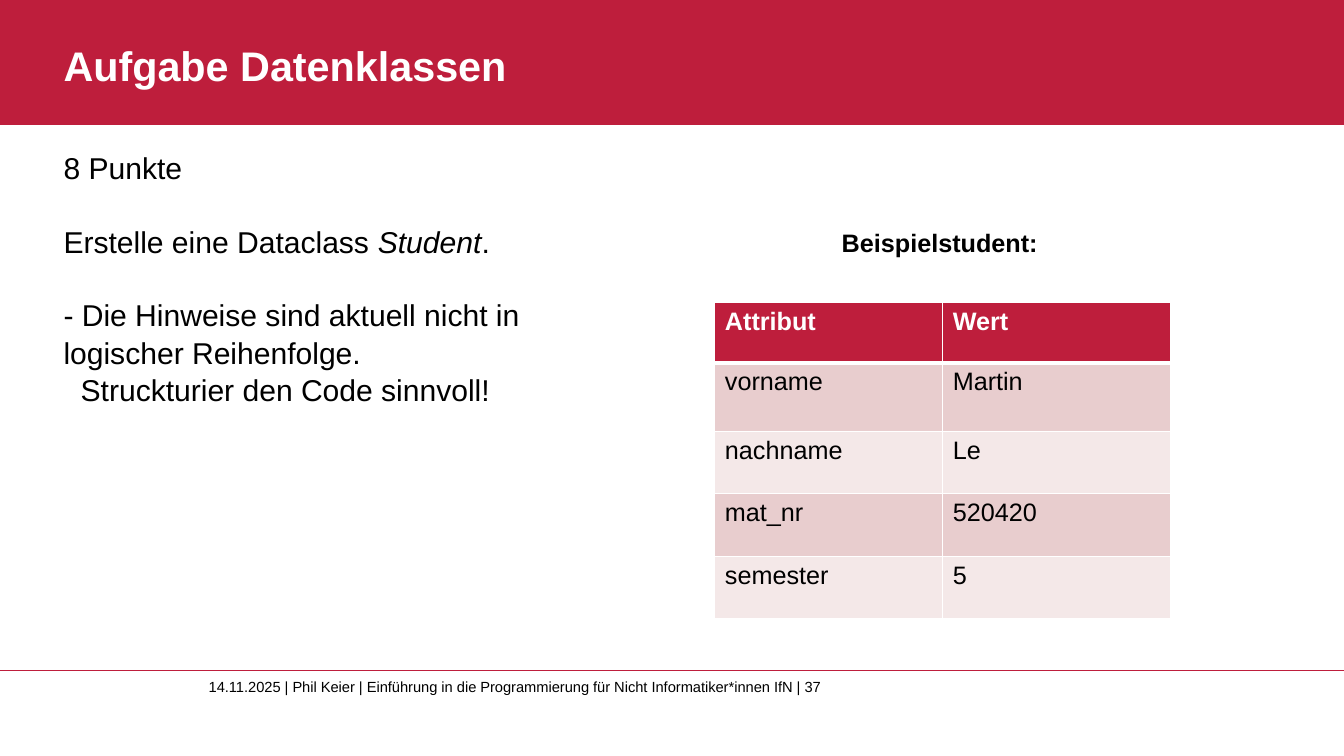
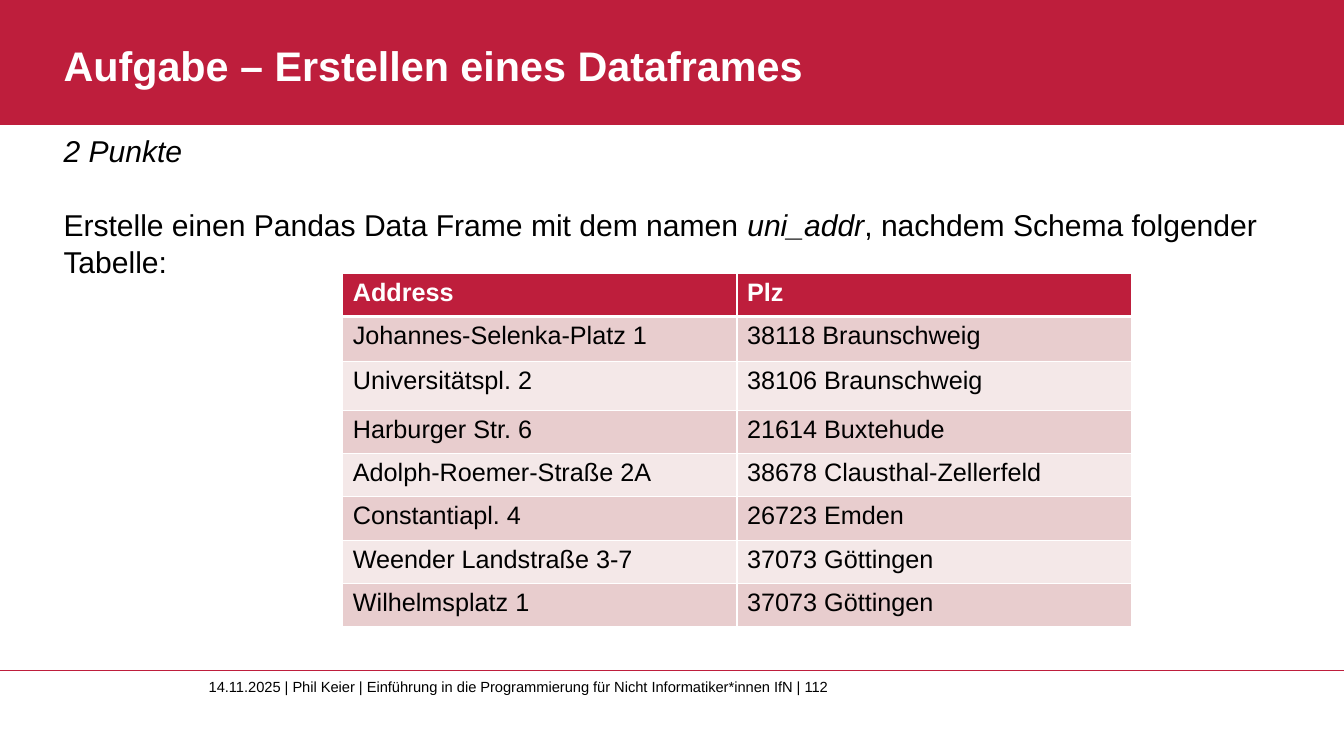
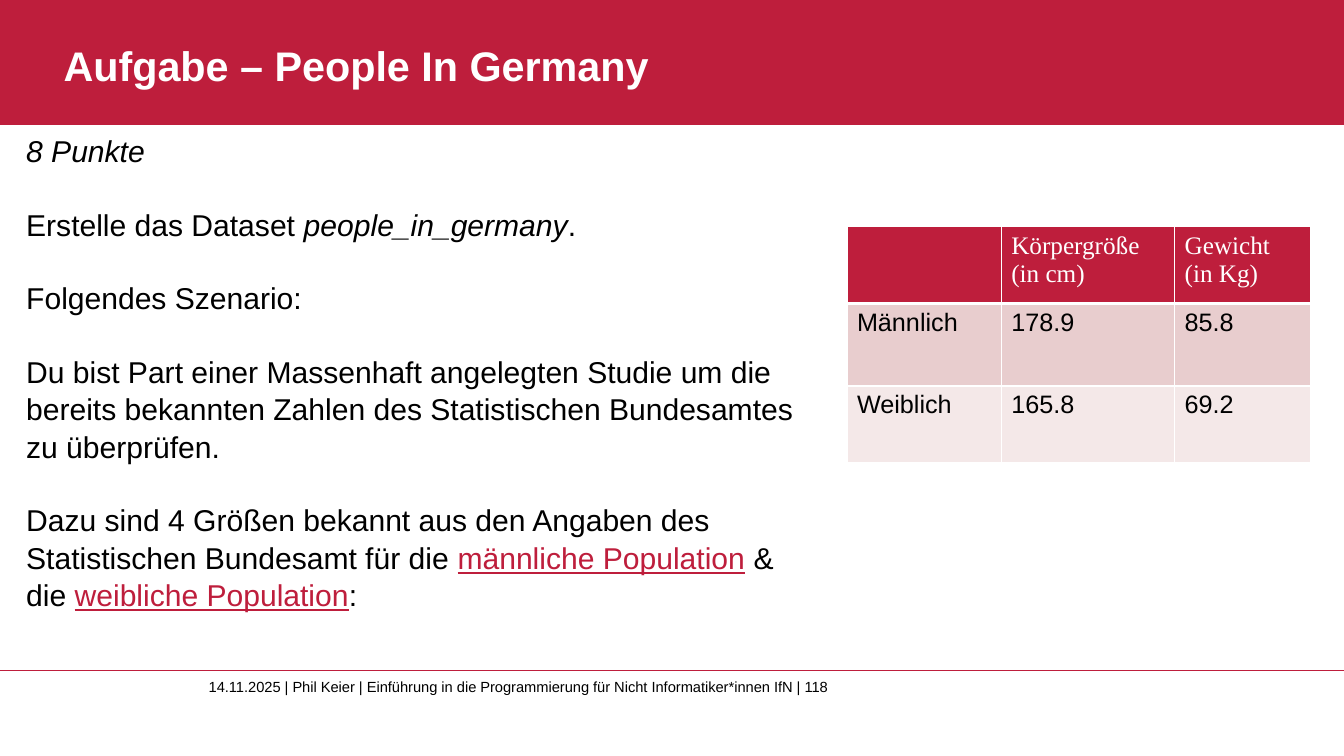
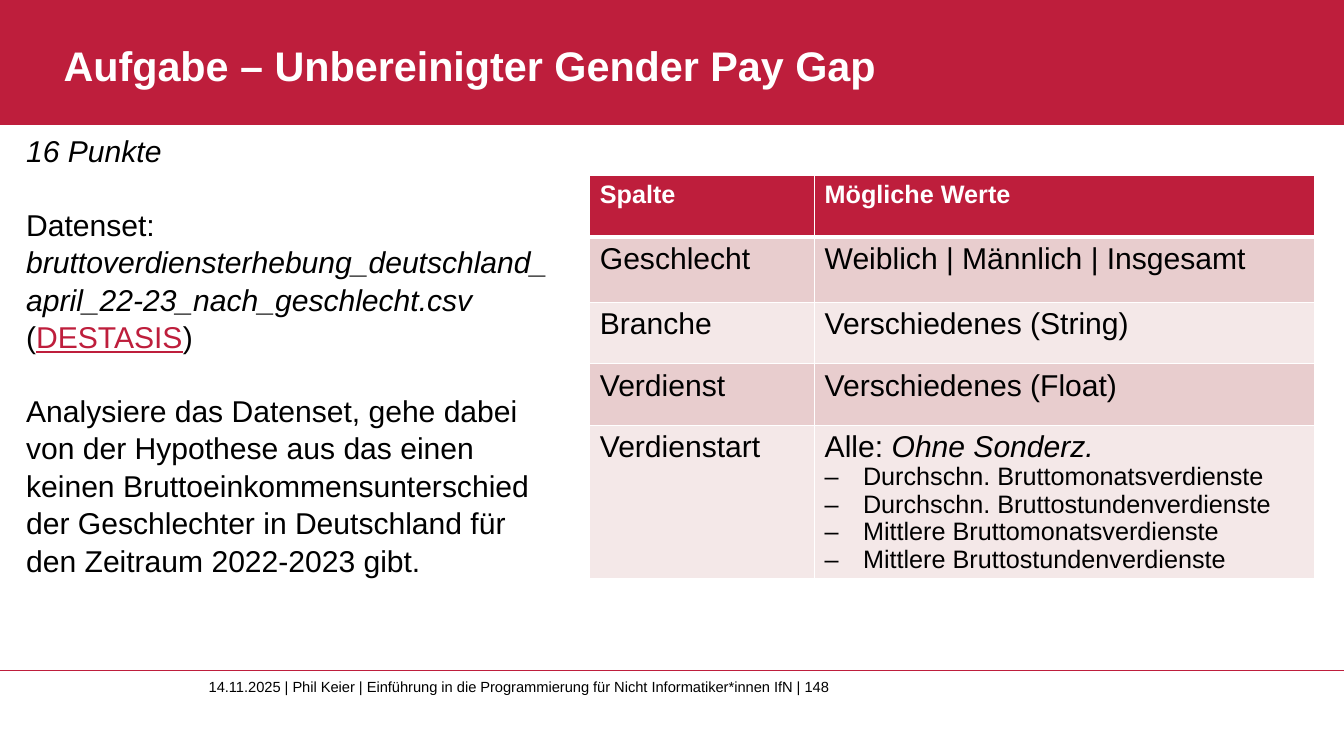
"""Builds four exercise slides on data classes and data frames."""
from lxml.etree import SubElement
from pptx import Presentation
from pptx.dml.color import RGBColor
from pptx.enum.shapes import MSO_CONNECTOR as CONN, MSO_SHAPE as SHAPE
from pptx.enum.text import MSO_ANCHOR as ANCHOR, MSO_AUTO_SIZE as AUTO
from pptx.oxml.ns import qn
from pptx.util import Inches, Pt

COLORS = {"red": "BE1E3C", "white": "FFFFFF", "black": "000000",
          "dark_band": "E8CDCE", "light_band": "F4E8E8"}
FONT = "Arial"
BODY_SIZE, TABLE_SIZE = 21.5, 18
BODY_SPACING = 1.04
GAP = Pt(25.7)
FOOTER = ("14.11.2025 | Phil Keier | Einführung in die Programmierung "
          "für Nicht Informatiker*innen IfN | {}")


def rgb(name):
    """Return the named colour."""
    return RGBColor.from_string(COLORS[name])


def place(shape, box):
    """Move a shape to a box of left, top, width and height in inches."""
    shape.left, shape.top, shape.width, shape.height = map(Inches, box)


def set_margins(tf):
    """Remove the insets and let the text wrap at its full size."""
    tf.margin_left = tf.margin_top = tf.margin_right = tf.margin_bottom = 0
    tf.word_wrap = True
    tf.auto_size = AUTO.NONE


def add_run(p, text, size, color="black", bold=False, kind="", font=FONT):
    """Add one run; kind is empty, "italic" or "link"."""
    r = p.add_run()
    r.text = text
    r.font.name, r.font.size, r.font.bold = font, Pt(size), bold
    r.font.italic = kind == "italic"
    r.font.underline = kind == "link"
    r.font.color.rgb = rgb("red" if kind == "link" else color)


def add_runs(p, parts, size):
    """Add plain text or a list of strings and (text, kind) pairs."""
    for part in [parts] if isinstance(parts, str) else parts:
        text, kind = (part, "") if isinstance(part, str) else part
        add_run(p, text, size, kind=kind)


def set_bullet(p, char="", indent=0.0, hang=0.0):
    """Set the bullet sign, or none, with the indents in inches."""
    pPr = p._p.get_or_add_pPr()
    pPr.set("marL", str(Inches(indent)))
    pPr.set("indent", str(-Inches(hang)))
    if char:
        SubElement(pPr, qn("a:buFont")).set("typeface", FONT)
        SubElement(pPr, qn("a:buChar")).set("char", char)
    else:
        SubElement(pPr, qn("a:buNone"))


def setup_layout(prs, s):
    """Put the band, the footer rule and the title frame on the layout."""
    layout = s.slide_layout
    band = s.shapes.add_shape(SHAPE.RECTANGLE, 0, 0, prs.slide_width, Inches(1.24))
    band.shadow.inherit = False
    band.fill.solid()
    band.fill.fore_color.rgb = rgb("red")
    band.line.fill.background()
    rule = s.shapes.add_connector(CONN.STRAIGHT, 0, Inches(6.65),
                                  prs.slide_width, Inches(6.65))
    rule.line.color.rgb = rgb("red")
    rule.line.width = Pt(0.75)
    SubElement(rule.element.spPr, qn("a:effectLst"))
    for shape in (band, rule):
        layout.shapes.element.insert(2, shape.element)
    title = layout.placeholders[0]
    place(title, (0.63, 0.12, 12.21, 0.77))


def add_slide(prs, title, number):
    """Add a slide with its title and footer."""
    s = prs.slides.add_slide(prs.slide_layouts[1])
    if len(prs.slides) == 1:
        setup_layout(prs, s)
    tf = s.shapes.title.text_frame
    set_margins(tf)
    tf.vertical_anchor = ANCHOR.BOTTOM
    p = tf.paragraphs[0]
    p.alignment = 1
    add_run(p, title, 29.5, "white", bold=True)
    footer = s.shapes.add_textbox(*map(Inches, (2.07, 6.72, 6.54, 0.53)))
    set_margins(footer.text_frame)
    add_run(footer.text_frame.paragraphs[0], FOOTER.format(number), 10.5)
    return s


def fill_body(s, box, paragraphs, tight=(), indents=None):
    """Fill the body; tight paragraphs follow without a gap."""
    body = s.placeholders[1]
    place(body, box)
    tf = body.text_frame
    set_margins(tf)
    for i, parts in enumerate(paragraphs):
        p = tf.add_paragraph() if i else tf.paragraphs[0]
        set_bullet(p, indent=(indents or {}).get(i, 0))
        p.line_spacing = BODY_SPACING
        p.space_before = GAP if i and i not in tight else 0
        add_runs(p, parts, BODY_SIZE)


def style_cell(cell, row):
    """Give a cell its white borders and its fill."""
    tcPr = cell._tc.get_or_add_tcPr()
    widths = {"L": 1, "R": 1, "T": 3 if row == 1 else 1, "B": 1 if row else 3}
    for side, width in widths.items():
        ln = SubElement(tcPr, qn(f"a:ln{side}"), w=str(Pt(width)))
        fill = SubElement(ln, qn("a:solidFill"))
        SubElement(fill, qn("a:srgbClr"), val=COLORS["white"])
    band = "dark_band" if row % 2 else "light_band"
    cell.fill.solid()
    cell.fill.fore_color.rgb = rgb(band if row else "red")


def add_table(s, at, widths, heights, rows, size=TABLE_SIZE, head_font=FONT):
    """Add a banded table whose first row is the heading."""
    table = s.shapes.add_table(
        len(rows), len(widths), *map(Inches, (*at, sum(widths), sum(heights)))).table
    for column, width in zip(table.columns, widths):
        column.width = Inches(width)
    for i, (row, height, texts) in enumerate(zip(table.rows, heights, rows)):
        row.height = Inches(height)
        for cell, parts in zip(row.cells, texts):
            style_cell(cell, i)
            p = cell.text_frame.paragraphs[0]
            if i:
                add_runs(p, parts, size)
            elif parts:
                add_run(p, parts, TABLE_SIZE, "white", head_font == FONT, font=head_font)
    return table


def add_bullets(tf, items):
    """Add dashed lines below the text of a cell."""
    for item in items:
        p = tf.add_paragraph()
        set_bullet(p, "–", 0.38, 0.38)
        p.line_spacing = 0.97
        add_run(p, item, TABLE_SIZE)


def data_classes(prs):
    """Build the slide on data classes."""
    s = add_slide(prs, "Aufgabe Datenklassen", 37)
    fill_body(s, (0.63, 1.47, 5.69, 5.06), [
        "8 Punkte",
        ["Erstelle eine Dataclass ", ("Student", "italic"), "."],
        "- Die Hinweise sind aktuell nicht in logischer Reihenfolge.",
        "Struckturier den Code sinnvoll!",
    ], tight=(3,), indents={3: 0.17})
    add_table(s, (7.09, 3), (2.26, 2.26), (0.6, 0.68, 0.62, 0.62, 0.62), [
        ("Attribut", "Wert"),
        ("vorname", "Martin"),
        ("nachname", "Le"),
        ("mat_nr", "520420"),
        ("semester", "5"),
    ])
    caption = s.shapes.add_textbox(*map(Inches, (8.25, 2.21, 2.22, 0.4)))
    add_run(caption.text_frame.paragraphs[0], "Beispielstudent:", TABLE_SIZE, bold=True)


def data_frame(prs):
    """Build the slide on creating a data frame."""
    s = add_slide(prs, "Aufgabe – Erstellen eines Dataframes", 112)
    fill_body(s, (0.63, 1.3, 12.21, 5.06), [
        [("2 Punkte", "italic")],
        ["Erstelle einen Pandas Data Frame mit dem namen ", ("uni_addr", "italic"),
         ", nachdem Schema folgender Tabelle:"],
    ])
    add_table(s, (3.4, 2.71), (3.91, 3.91), (0.43, 0.45, 0.48) + (0.43,) * 5, [
        ("Address", "Plz"),
        ("Johannes-Selenka-Platz 1", "38118 Braunschweig"),
        ("Universitätspl. 2", "38106 Braunschweig"),
        ("Harburger Str. 6", "21614 Buxtehude"),
        ("Adolph-Roemer-Straße 2A", "38678 Clausthal-Zellerfeld"),
        ("Constantiapl. 4", "26723 Emden"),
        ("Weender Landstraße 3-7", "37073 Göttingen"),
        ("Wilhelmsplatz 1", "37073 Göttingen"),
    ])


def people_in_germany(prs):
    """Build the slide on body height and weight."""
    s = add_slide(prs, "Aufgabe – People In Germany", 118)
    fill_body(s, (0.26, 1.3, 7.82, 5.06), [
        [("8 Punkte", "italic")],
        ["Erstelle das Dataset ", ("people_in_germany", "italic"), "."],
        "Folgendes Szenario:",
        "Du bist Part einer Massenhaft angelegten Studie um die bereits bekannten "
        "Zahlen des Statistischen Bundesamtes zu überprüfen.",
        ["Dazu sind 4 Größen bekannt aus den Angaben des Statistischen Bundesamt "
         "für die ", ("männliche Population", "link"), " & die ",
         ("weibliche Population", "link"), ":"],
    ])
    add_table(s, (8.4, 2.25), (1.53, 1.72, 1.35), (0.76, 0.82, 0.76), [
        ("", "Körpergröße (in cm)", "Gewicht (in Kg)"),
        ("Männlich", "178.9", "85.8"),
        ("Weiblich", "165.8", "69.2"),
    ], head_font="Times New Roman")


def pay_gap(prs):
    """Build the slide on the gender pay gap."""
    s = add_slide(prs, "Aufgabe – Unbereinigter Gender Pay Gap", 148)
    fill_body(s, (0.26, 1.3, 5.28, 5.06), [
        [("16 Punkte", "italic")],
        ["Datenset: ", ("bruttoverdiensterhebung_deutschland_april_22-23_"
                        "nach_geschlecht.csv", "italic")],
        ["(", ("DESTASIS", "link"), ")"],
        "Analysiere das Datenset, gehe dabei von der Hypothese aus das einen keinen "
        "Bruttoeinkommensunterschied der Geschlechter in Deutschland für den "
        "Zeitraum 2022-2023 gibt.",
    ], tight=(2,))
    table = add_table(s, (5.85, 1.74), (2.23, 4.96), (0.61, 0.65, 0.61, 0.61, 0.61), [
        ("Spalte", "Mögliche Werte"),
        ("Geschlecht", "Weiblich | Männlich | Insgesamt"),
        ("Branche", "Verschiedenes (String)"),
        ("Verdienst", "Verschiedenes (Float)"),
        ("Verdienstart", ["Alle: ", ("Ohne Sonderz.", "italic")]),
    ], size=BODY_SIZE)
    add_bullets(table.cell(4, 1).text_frame, [
        f"{kind} Brutto{period}verdienste"
        for kind in ("Durchschn.", "Mittlere") for period in ("monats", "stunden")])


def main():
    """Build and save the presentation."""
    prs = Presentation()
    prs.slide_width, prs.slide_height = Inches(13.33), Inches(7.5)
    for build in (data_classes, data_frame, people_in_germany, pay_gap):
        build(prs)
    prs.save("out.pptx")


if __name__ == "__main__":
    main()
